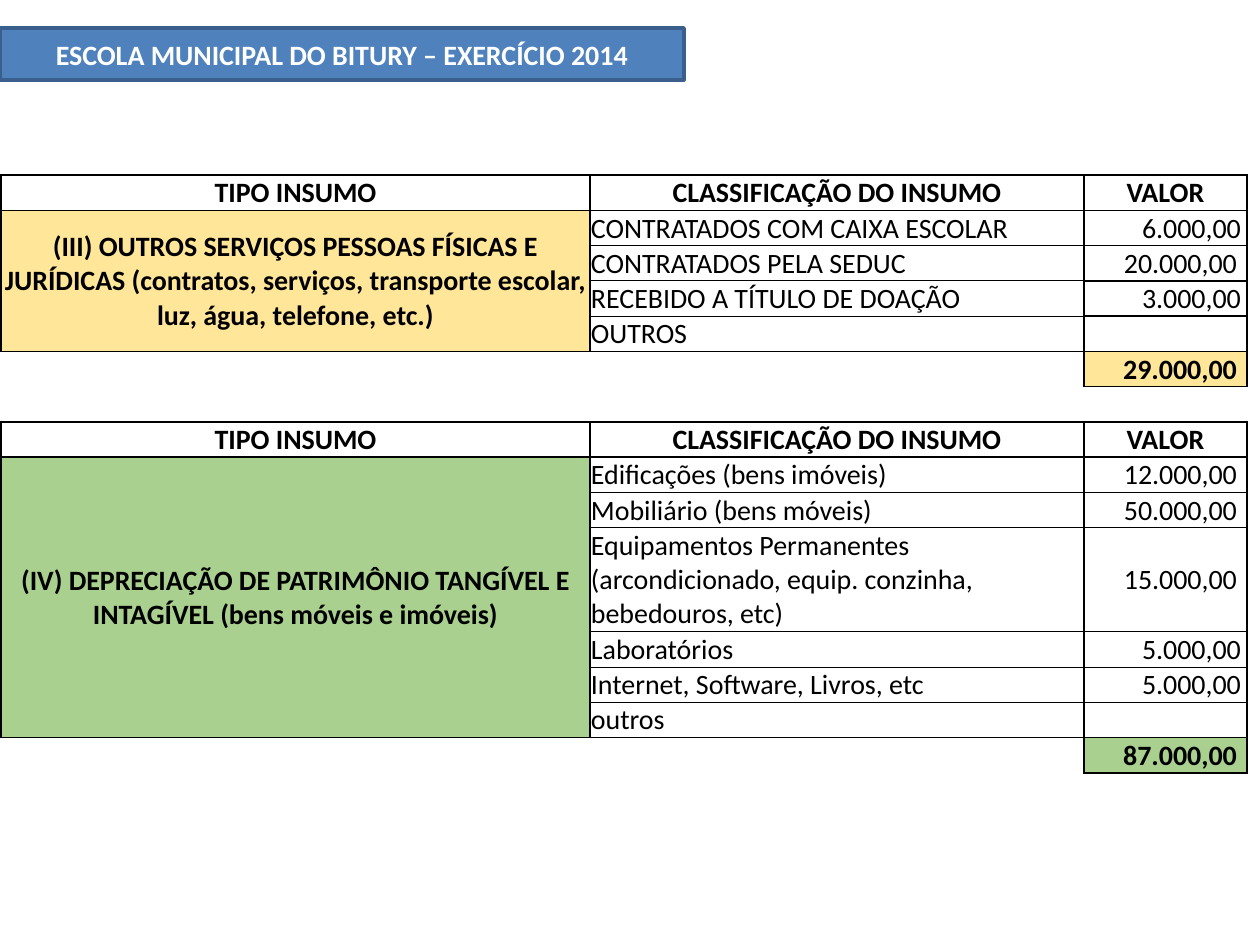
from lxml.etree import SubElement
from pptx import Presentation
from pptx.dml.color import RGBColor
from pptx.enum.shapes import MSO_SHAPE as Shape
from pptx.enum.text import MSO_ANCHOR as Anchor, PP_ALIGN as Align
from pptx.oxml.ns import qn
from pptx.util import Emu, Pt

COLORS = {"title": "4F81BD", "title_line": "3A5F8C", "white": "FFFFFF",
          "black": "000000", "services": "FFE699", "assets": "A9D08E"}
FONT, SIZE = "Calibri", 16
NO_STYLE = "{2D5ABB26-0587-4C30-8999-92F81FD0307C}"

TITLE = "ESCOLA MUNICIPAL DO BITURY – EXERCÍCIO 2014"
HEADERS = ("TIPO INSUMO", "CLASSIFICAÇÃO DO INSUMO", "VALOR")
BLOCKS = [
    {"kind": "(III) OUTROS SERVIÇOS PESSOAS FÍSICAS E JURÍDICAS "
             "(contratos, serviços, transporte escolar, luz, água, telefone, etc.)",
     "color": "services", "value_rule": 1, "total": "29.000,00",
     "items": [("CONTRATADOS COM CAIXA ESCOLAR", "6.000,00"),
               ("CONTRATADOS PELA SEDUC", "20.000,00"),
               ("RECEBIDO A TÍTULO DE DOAÇÃO", "3.000,00"),
               ("OUTROS", "")]},
    {"kind": "(IV) DEPRECIAÇÃO DE PATRIMÔNIO TANGÍVEL E INTAGÍVEL (bens móveis e imóveis)",
     "color": "assets", "value_rule": 0.5, "total": "87.000,00",
     "items": [("Edificações (bens imóveis)", "12.000,00"),
               ("Mobiliário (bens móveis)", "50.000,00"),
               ("Equipamentos Permanentes (arcondicionado, equip. conzinha, "
                "bebedouros, etc)", "15.000,00"),
               ("Laboratórios", "5.000,00"),
               ("Internet, Software, Livros, etc", "5.000,00"),
               ("outros", "")]},
]
COLUMNS = (589, 494, 163)
ROW_HEIGHT, TALL_HEIGHT, LONG_TEXT = 35, 104, 40
TABLE_LEFT, TABLE_TOP = 1, 175


def px(value):
    return Emu(round(value * 914400 / 126))


def color(name):
    return RGBColor.from_string(COLORS[name])


def write(paragraph, text, align, bold, ink="black"):
    paragraph.alignment = align
    if not text:
        SubElement(paragraph._p, qn("a:endParaRPr"), sz=str(SIZE * 100))
        return
    run = paragraph.add_run()
    run.text = text
    run.font.name, run.font.size, run.font.bold = FONT, Pt(SIZE), bold
    run.font.color.rgb = color(ink)


def set_borders(cell, left=0, right=0, top=0, bottom=0):
    properties = cell._tc.get_or_add_tcPr()
    for tag, width in zip("LRTB", (left, right, top, bottom)):
        line = SubElement(properties, qn(f"a:ln{tag}"), w=str(Pt(width)))
        if width:
            fill = SubElement(line, qn("a:solidFill"))
            SubElement(fill, qn("a:srgbClr"), val=COLORS["black"])
        else:
            SubElement(line, qn("a:noFill"))


def fill_cell(cell, text="", align=Align.LEFT, bold=False, fill=None, borders=None):
    set_borders(cell, **(borders or {}))
    cell.margin_left = cell.margin_top = px(1)
    cell.margin_right = px(1)
    if align == Align.RIGHT:
        cell.margin_right = px(10 if len(text) > 8 else 6)
    cell.margin_bottom = 0
    cell.vertical_anchor = Anchor.MIDDLE
    if fill:
        cell.fill.solid()
        cell.fill.fore_color.rgb = color(fill)
    else:
        cell.fill.background()
    write(cell.text_frame.paragraphs[0], text, align, bold)


def box(top=1, bottom=1):
    return {"left": 1, "right": 1, "top": top, "bottom": bottom}


def fill_block(table, start, block):
    items = block["items"]
    for column, header in enumerate(HEADERS):
        fill_cell(table.cell(start, column), header, Align.CENTER, True, borders=box())

    first, last = start + 1, start + len(items)
    for row, (label, value) in enumerate(items, first):
        kind = block["kind"] if row == first else ""
        fill_cell(table.cell(row, 0), kind, Align.CENTER, True, block["color"], box())
        for column, text, align, rule in ((1, label, Align.LEFT, 0.5),
                                          (2, value, Align.RIGHT, block["value_rule"])):
            edges = box(1 if row == first else rule, 1 if row == last else rule)
            fill_cell(table.cell(row, column), text, align, borders=edges)
        if len(label) > LONG_TEXT:
            table.rows[row].height = px(TALL_HEIGHT)
    table.cell(first, 0).merge(table.cell(last, 0))

    total = last + 1
    fill_cell(table.cell(total, 0), borders={"top": 1})
    fill_cell(table.cell(total, 1), borders={"top": 1, "right": 1})
    fill_cell(table.cell(total, 2), block["total"], Align.RIGHT, True,
              block["color"], box())
    return total + 1


presentation = Presentation()
presentation.slide_width, presentation.slide_height = px(1260), px(945)
slide = presentation.slides.add_slide(presentation.slide_layouts[6])

title = slide.shapes.add_shape(Shape.RECTANGLE, 0, px(28), px(684), px(52))
title.shadow.inherit = False
title.fill.solid()
title.fill.fore_color.rgb = color("title")
title.line.color.rgb = color("title_line")
title.line.width = Pt(2)
title.text_frame.word_wrap = True
title.text_frame.vertical_anchor = Anchor.MIDDLE
write(title.text_frame.paragraphs[0], TITLE, Align.CENTER, True, "white")

row_count = sum(len(block["items"]) + 2 for block in BLOCKS) + len(BLOCKS) - 1
frame = slide.shapes.add_table(row_count, len(COLUMNS), px(TABLE_LEFT), px(TABLE_TOP),
                               px(sum(COLUMNS)), px(row_count * ROW_HEIGHT))
table = frame.table
table.first_row = table.horz_banding = False
table._tbl.tblPr.find(qn("a:tableStyleId")).text = NO_STYLE
for column, width in zip(table.columns, COLUMNS):
    column.width = px(width)
for row in table.rows:
    row.height = px(ROW_HEIGHT)

next_row = 0
for block in BLOCKS:
    if next_row:
        for column in range(len(COLUMNS)):
            top = 1 if column == len(COLUMNS) - 1 else 0
            fill_cell(table.cell(next_row, column), borders={"top": top, "bottom": 1})
        next_row += 1
    next_row = fill_block(table, next_row, block)

presentation.save("out.pptx")
